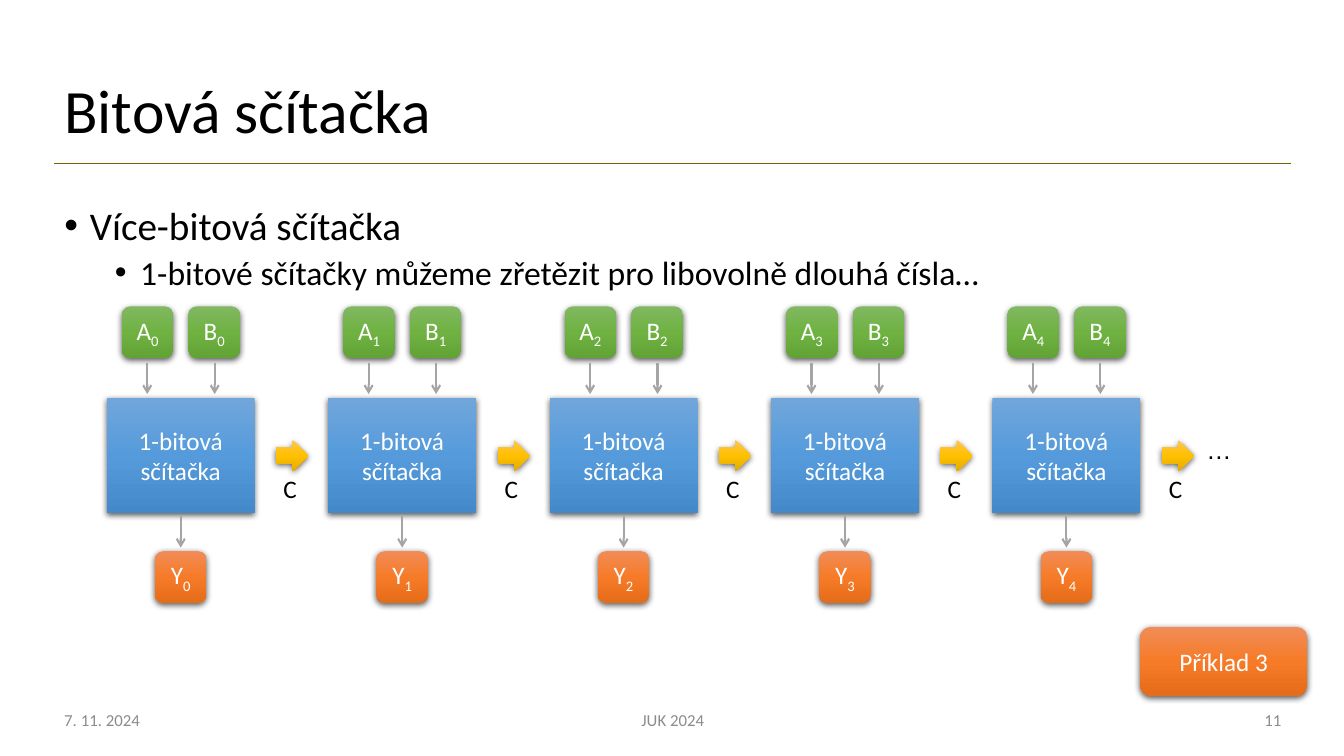
import copy

import lxml.etree
import pptx
import pptx.dml.color
import pptx.enum.shapes
import pptx.enum.text
import pptx.oxml.ns
import pptx.util

Cm = pptx.util.Cm
Pt = pptx.util.Pt
qn = pptx.oxml.ns.qn
SHAPES = pptx.enum.shapes.MSO_SHAPE
ALIGN = pptx.enum.text.PP_ALIGN
ANCHOR = pptx.enum.text.MSO_ANCHOR
AUTO_SIZE = pptx.enum.text.MSO_AUTO_SIZE

COLORS = {
    "text": "000000", "light": "FFFFFF", "footer": "8C8C8C",
    "rule": "806000", "arrow": "A5A5A5", "shadow": "000000",
}
GRADIENTS = {
    "adder": ("71A6DB", "559BDB", "448ACA"),
    "input": ("81B861", "6FB242", "62A336"),
    "output": ("F18C57", "F67B28", "E56C19"),
    "carry": ("FFC64B", "FFC000", "E3AB00"),
}
BIT_SIZE = 1.3
ADDER_PITCH = 5.58
ADDER_COUNT = 5


def rgb(value):
    return pptx.dml.color.RGBColor.from_string(value)


def apply_formats(target, formats):
    for attribute, value in formats.items():
        setattr(target, attribute, value)


def add_xml(parent, tag, **attributes):
    element = lxml.etree.SubElement(parent, qn(tag))
    for key, value in attributes.items():
        element.set(key, value)
    return element


def write_run(paragraph, text, size=18, color="text", font="Calibri"):
    paragraph.line_spacing = paragraph.line_spacing or 1.0
    run = paragraph.add_run()
    run.text = text
    apply_formats(run.font, {"size": Pt(size), "name": font})
    run.font.color.rgb = rgb(COLORS[color])
    return run


def place(part, box):
    apply_formats(part, dict(zip(("left", "top", "width", "height"), map(Cm, box))))


def add_label(slide, box, text, align=ALIGN.LEFT, **style):
    label = slide.shapes.add_textbox(*map(Cm, box))
    paragraph = label.text_frame.paragraphs[0]
    paragraph.alignment = align
    write_run(paragraph, text, **style)
    return label.text_frame


def add_symbol(slide, box, text, font="Calibri"):
    frame = add_label(slide, box, text, font=font)
    apply_formats(frame, {"word_wrap": False, "auto_size": AUTO_SIZE.SHAPE_TO_FIT_TEXT})


def add_block(slide, kind, box, gradient, lines=(), subscript=""):
    block = slide.shapes.add_shape(kind, *map(Cm, box))
    block.fill.gradient()
    block.fill.gradient_angle = 270
    stop_list = block.element.spPr.find(".//" + qn("a:gsLst"))
    stop_list.insert(1, copy.deepcopy(stop_list[0]))
    for index, (stop, color) in enumerate(zip(block.fill.gradient_stops, GRADIENTS[gradient])):
        stop.position = index / 2
        stop.color.rgb = rgb(color)
    block.line.fill.background()
    block.shadow.inherit = False
    shadow = add_xml(block.element.spPr.find(qn("a:effectLst")), "a:outerShdw",
                     blurRad=str(Pt(4.5)), dist=str(Pt(1.5)), dir="5400000",
                     algn="ctr", rotWithShape="0")
    add_xml(add_xml(shadow, "a:srgbClr", val=COLORS["shadow"]), "a:alpha", val="63000")
    block.text_frame.vertical_anchor = ANCHOR.MIDDLE
    paragraph = block.text_frame.paragraphs[0]
    paragraph.alignment = ALIGN.CENTER
    for index, line in enumerate(lines):
        if index:
            paragraph.add_line_break()
        write_run(paragraph, line, color="light")
    if subscript:
        index_run = write_run(paragraph, subscript, color="light")
        index_run.font._element.set("baseline", "-25000")


def add_line(slide, start, end, color, width):
    line = slide.shapes.add_connector(
        pptx.enum.shapes.MSO_CONNECTOR.STRAIGHT, *map(Cm, start + end))
    line.line.color.rgb = rgb(COLORS[color])
    line.line.width = Pt(width)
    add_xml(line.element.spPr, "a:effectLst")
    return line


def add_flow(slide, x, top, bottom):
    flow = add_line(slide, (x, top), (x, bottom), "arrow", 1.5)
    add_xml(flow.element.spPr.find(qn("a:ln")), "a:tailEnd", type="arrow")


def build_title(slide, box):
    title = slide.shapes.title
    place(title, box)
    apply_formats(title.text_frame, {
        "vertical_anchor": ANCHOR.MIDDLE, "auto_size": AUTO_SIZE.NONE, "word_wrap": True})
    heading = title.text_frame.paragraphs[0]
    apply_formats(heading, {"alignment": ALIGN.LEFT, "line_spacing": 0.9})
    write_run(heading, "Bitová sčítačka", size=44)
    rule_y = box[1] + 3.1
    add_line(slide, (box[0] + 31.17, rule_y), (box[0], rule_y), "rule", 1)


def build_outline(slide, box):
    body = slide.placeholders[1]
    place(body, box)
    frame = body.text_frame
    apply_formats(frame, {"auto_size": AUTO_SIZE.NONE, "word_wrap": True})
    items = (
        ("Více-bitová sčítačka", 28, 0.64, 0),
        ("1-bitové sčítačky můžeme zřetězit pro libovolně dlouhá čísla…", 24, 1.91, 5),
    )
    for level, (text, size, margin, space) in enumerate(items):
        item = frame.add_paragraph() if level else frame.paragraphs[0]
        properties = item._p.get_or_add_pPr()
        properties.set("marL", str(Cm(margin)))
        properties.set("indent", str(Cm(-0.64)))
        add_xml(properties, "a:buFont", typeface="Arial")
        add_xml(properties, "a:buChar", char="•")
        apply_formats(item, {"level": level, "line_spacing": 0.9, "space_before": Pt(space)})
        write_run(item, text, size=size)


def build_adder(slide, box, bit):
    left, top, width, height = box
    add_block(slide, SHAPES.RECTANGLE, box, "adder", ("1-bitová", "sčítačka"))
    bits = (
        ("A", 0.38, -2.31, "input"),
        ("B", 2.06, -2.31, "input"),
        ("Y", (width - BIT_SIZE) / 2, height + 0.96, "output"),
    )
    for letter, x, y, gradient in bits:
        add_block(slide, SHAPES.ROUNDED_RECTANGLE, (left + x, top + y, BIT_SIZE, BIT_SIZE),
                  gradient, (letter,), str(bit))
    for x in (1.02, 2.72):
        add_flow(slide, left + x, top - 0.89, top - 0.1)
    add_flow(slide, left + width / 2, top + height + 0.08, top + height + 0.87)
    add_block(slide, SHAPES.RIGHT_ARROW, (left + width + 0.54, top + 1.06, 0.81, 0.79), "carry")
    add_symbol(slide, (left + width + 0.47, top + 1.78, 0.86, 1.02), "C")


def build_adder_chain(slide, box):
    left, top, width, height = box
    for bit in range(ADDER_COUNT):
        build_adder(slide, (left + bit * ADDER_PITCH, top, 3.73, height), bit)
    add_symbol(slide, (left + width - 1.14, top + 0.79, 1.14, 1.02), "…", "Arial")


def build_footer(slide, box):
    left, top, width, height = box
    entries = (
        ("7. 11. 2024", left, 7.62, ALIGN.LEFT),
        ("JUK 2024", left + (width - 11.43) / 2, 11.43, ALIGN.CENTER),
        ("11", left + width - 7.62, 7.62, ALIGN.RIGHT),
    )
    for text, x, entry_width, align in entries:
        entry = add_label(slide, (x, top, entry_width, height), text, align,
                          size=12, color="footer")
        apply_formats(entry, {"word_wrap": True, "vertical_anchor": ANCHOR.MIDDLE})


def main():
    presentation = pptx.Presentation()
    apply_formats(presentation, {"slide_width": Cm(33.87), "slide_height": Cm(19.05)})
    slide = presentation.slides.add_slide(presentation.slide_layouts[1])
    build_title(slide, (1.37, 1.02, 28.14, 3.68))
    build_outline(slide, (1.37, 5.08, 31.17, 12.09))
    build_footer(slide, (1.37, 17.64, 31.17, 1.02))
    build_adder_chain(slide, (2.69, 10.03, 28.6, 2.9))
    add_block(slide, SHAPES.ROUNDED_RECTANGLE, (28.73, 15.8, 4.22, 1.73),
              "output", ("Příklad 3",))
    presentation.save("out.pptx")


if __name__ == "__main__":
    main()
